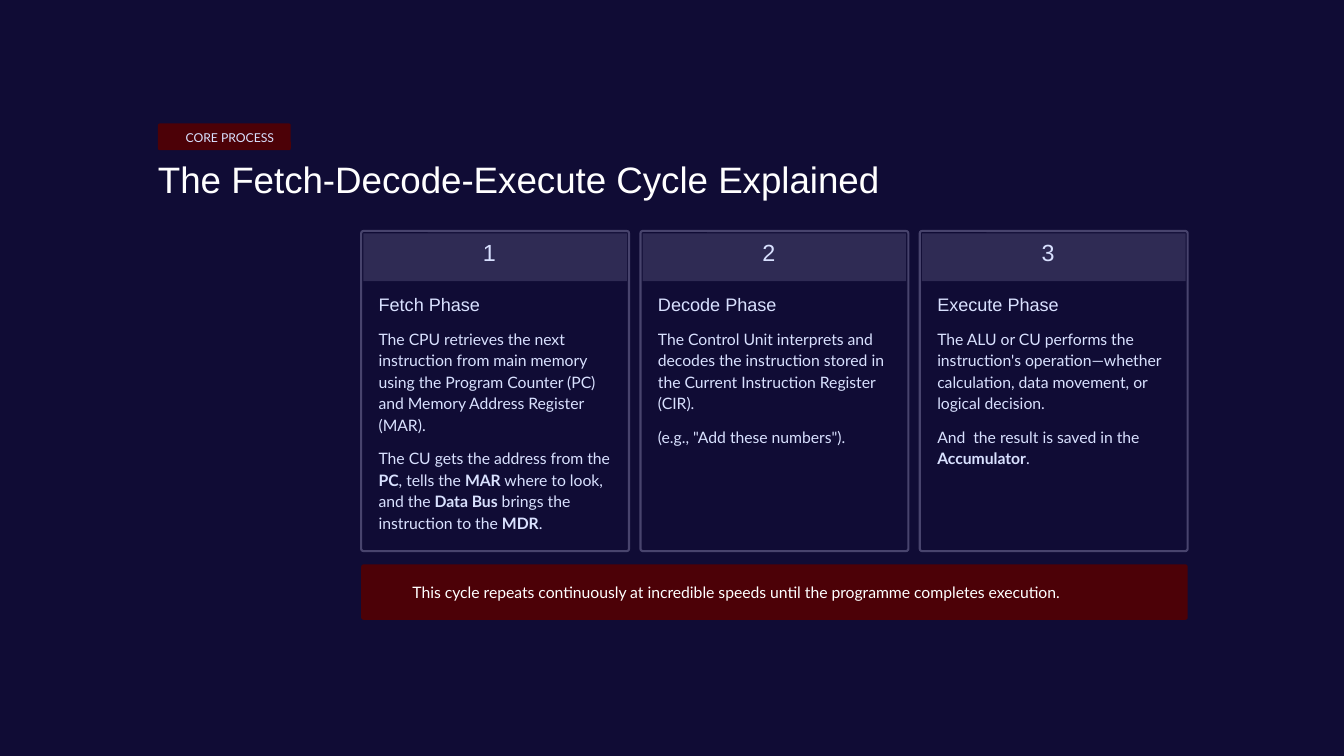
from dataclasses import dataclass

from pptx import Presentation
from pptx.dml.color import RGBColor
from pptx.enum import shapes, text
from pptx.util import Pt

TAG = "CORE PROCESS"
TITLE = "The Fetch-Decode-Execute Cycle Explained"
PHASES = [
    ("Fetch Phase", [
        "The CPU retrieves the next instruction from main memory using the "
        "Program Counter (PC) and Memory Address Register (MAR).",
        "The CU gets the address from the **PC**, tells the **MAR** where to look, "
        "and the **Data Bus** brings the instruction to the **MDR**.",
    ]),
    ("Decode Phase", [
        "The Control Unit interprets and decodes the instruction stored in the "
        "Current Instruction Register (CIR).",
        '(e.g., "Add these numbers").',
    ]),
    ("Execute Phase", [
        "The ALU or CU performs the instruction's operation—whether calculation, "
        "data movement, or logical decision.",
        "And  the result is saved in the **Accumulator**.",
    ]),
]
FOOTER = "This cycle repeats continuously at incredible speeds until the programme completes execution."


@dataclass(frozen=True)
class Style:
    font: str
    size: float
    leading: float
    color: str


class Theme:
    background = "100C35"
    accent = "4C0107"
    band = "2F2B54"
    border = "48446D"
    pale = "D9E1FF"
    white = "FFFFFF"
    tag = Style("Lato", 10.5, 14.5, pale)
    title = Style("Arial", 31.5, 39.5, white)
    number = Style("Arial", 20, 20, pale)
    heading = Style("Arial", 15.5, 19.5, pale)
    body = Style("Lato", 13.5, 18.5, pale)
    footer = Style("Lato", 13.5, 18.5, white)


CARD_LEFT, CARD_TOP, CARD_W, CARD_H = 309.6, 198, 229.6, 274.4
CARD_GAP = 9.8
PARAGRAPH_GAP = 10


def add_block(s, box, fill, radius=0, line=None):
    kind = shapes.MSO_SHAPE.ROUNDED_RECTANGLE if radius else shapes.MSO_SHAPE.RECTANGLE
    sp = s.shapes.add_shape(kind, *map(Pt, box))
    if radius:
        sp.adjustments[0] = radius / min(box[2:])
    sp.shadow.inherit = False
    sp.fill.solid()
    sp.fill.fore_color.rgb = RGBColor.from_string(fill)
    if line:
        sp.line.color.rgb = RGBColor.from_string(line)
        sp.line.width = Pt(1.8)
    else:
        sp.line.fill.background()


def write(sp, paragraphs, style):
    """Fill a shape with paragraphs; words between ** marks become bold."""
    tf = sp.text_frame
    tf.word_wrap = True
    tf.auto_size = text.MSO_AUTO_SIZE.NONE
    tf.vertical_anchor = text.MSO_ANCHOR.TOP
    tf.margin_left = tf.margin_top = tf.margin_right = tf.margin_bottom = 0
    for i, content in enumerate(paragraphs):
        p = tf.add_paragraph() if i else tf.paragraphs[0]
        p.alignment = text.PP_ALIGN.LEFT
        p.line_spacing = Pt(style.leading)
        p.space_before = Pt(PARAGRAPH_GAP if i else 0)
        for j, part in enumerate(content.split("**")):
            r = p.add_run()
            r.text = part
            r.font.name = style.font
            r.font.size = Pt(style.size)
            r.font.bold = j % 2 == 1
            r.font.color.rgb = RGBColor.from_string(style.color)


def add_text(s, box, paragraphs, style):
    write(s.shapes.add_textbox(*map(Pt, box)), paragraphs, style)


def add_card(s, index, heading, paragraphs):
    left = CARD_LEFT + index * (CARD_W + CARD_GAP)
    text_left = left + 15
    add_block(s, (left, CARD_TOP, CARD_W, CARD_H), Theme.background, 2, Theme.border)
    add_block(s, (left + 1.8, CARD_TOP + 2, CARD_W - 3.6, 41), Theme.band)
    add_text(s, (left + 104.4, 208, 20, 25), [str(index + 1)], Theme.number)
    add_text(s, (text_left, 250.6, 160, 20), [heading], Theme.heading)
    add_text(s, (text_left, 280, 199, 178), paragraphs, Theme.body)


def main():
    prs = Presentation()
    prs.slide_width, prs.slide_height = Pt(1152), Pt(648)
    s = prs.slides.add_slide(prs.slide_layouts[5])
    s.background.fill.solid()
    s.background.fill.fore_color.rgb = RGBColor.from_string(Theme.background)

    title = s.shapes.title
    title.left, title.top, title.width, title.height = map(Pt, (135.4, 132.5, 640, 39.6))
    write(title, [TITLE], Theme.title)

    add_block(s, (135.4, 105.8, 113.8, 23), Theme.accent, 1.6)
    add_text(s, (159.1, 109.4, 84, 15), [TAG], Theme.tag)

    for i, (heading, paragraphs) in enumerate(PHASES):
        add_card(s, i, heading, paragraphs)

    row_width = len(PHASES) * (CARD_W + CARD_GAP) - CARD_GAP
    add_block(s, (CARD_LEFT, 483.8, row_width, 47.5), Theme.accent, 2)
    add_text(s, (353.5, 496.8, 650, 18.7), [FOOTER], Theme.footer)

    prs.save("out.pptx")


if __name__ == "__main__":
    main()
